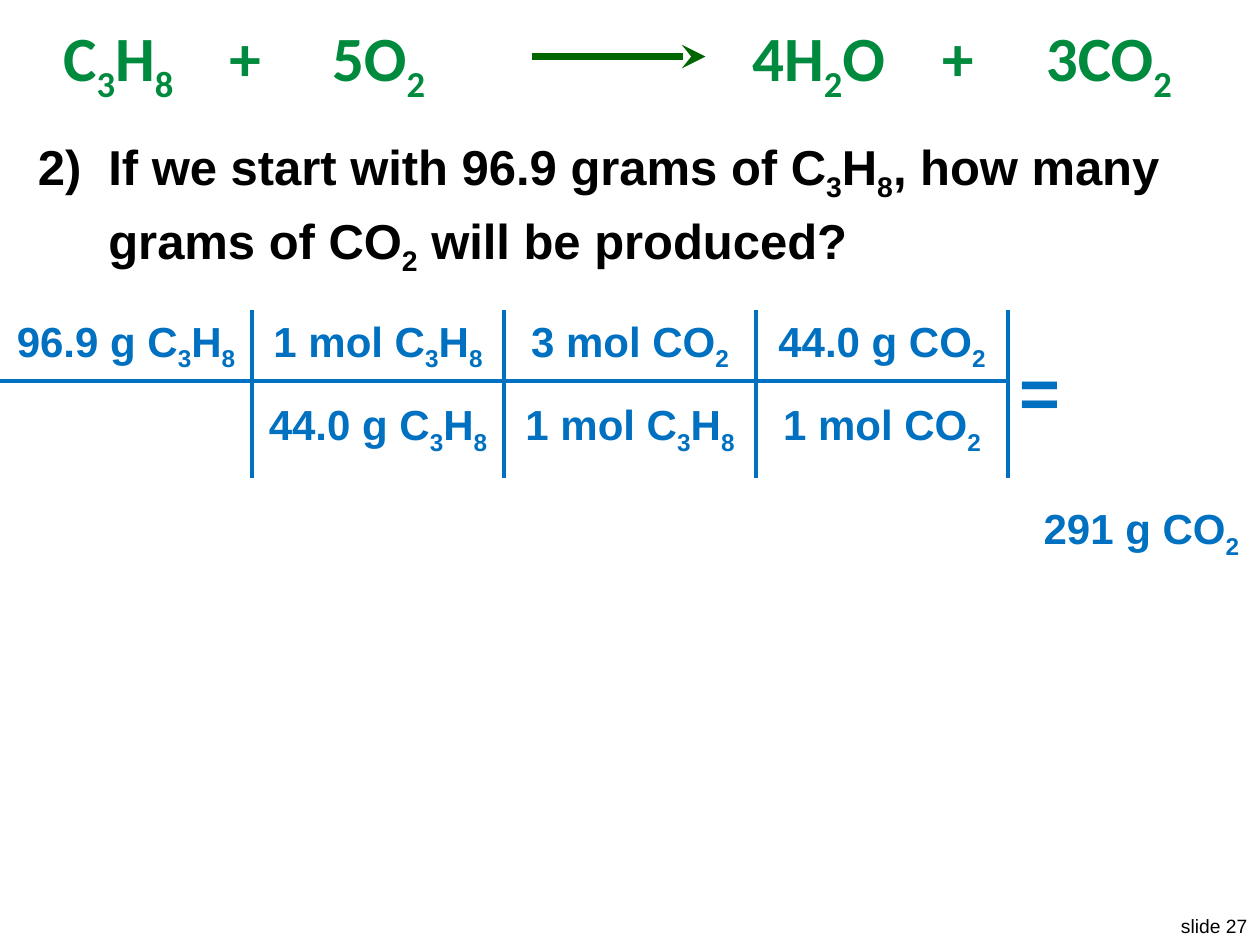
from collections import namedtuple

from lxml import etree
from pptx import Presentation
from pptx.dml.color import RGBColor
from pptx.enum.shapes import MSO_CONNECTOR
from pptx.enum.text import MSO_ANCHOR, MSO_AUTO_SIZE, PP_ALIGN
from pptx.oxml.ns import qn
from pptx.util import Cm, Pt

Box = namedtuple("Box", "left top width height")
GREEN, DARK_GREEN, BLUE, BLACK = "008A3E", "006600", "0070C0", "000000"


def colour(value):
    return RGBColor.from_string(value)


def apply(target, values):
    for name, value in values.items():
        setattr(target, name, value)


def place(box):
    return [Cm(length) for length in box]


def write_formula(paragraph, text, size, ink, font="Arial", bold=True):
    first, *rest = text.split("_")
    pieces = [(first, False)]
    for part in rest:
        pieces += [(part[0], True), (part[1:], False)]
    for piece, lowered in pieces:
        if piece:
            run = paragraph.add_run()
            run.text = piece
            apply(run.font, {"name": font, "size": Pt(size), "bold": bold})
            run.font.color.rgb = colour(ink)
            if lowered:
                run.font._element.set("baseline", "-25000")


def prepare_placeholder(placeholder, box):
    apply(placeholder, dict(zip(Box._fields, place(box))))
    apply(placeholder.text_frame, {
        "word_wrap": True, "vertical_anchor": MSO_ANCHOR.TOP,
        "auto_size": MSO_AUTO_SIZE.NONE})
    paragraph = placeholder.text_frame.paragraphs[0]
    apply(paragraph, {"alignment": PP_ALIGN.LEFT, "space_before": Pt(0)})
    return paragraph


def add_equation(slide, box):
    paragraph = prepare_placeholder(slide.shapes.title, box)
    tabs = etree.SubElement(paragraph._p.get_or_add_pPr(), qn("a:tabLst"))
    for position in (3.35, 5.42, 13.89, 17.72, 19.81):
        etree.SubElement(tabs, qn("a:tab"), pos=str(Cm(position)), algn="l")
    terms = ("C_3H_8", "+", "5O_2", "4H_2O", "+", "3CO_2")
    write_formula(paragraph, "\t".join(terms), 36, GREEN, "Calibri")

    start, level = box.left + 9.7, box.top + 0.89
    arrow = slide.shapes.add_connector(
        MSO_CONNECTOR.STRAIGHT, *place((start, level, start + 3.5, level)))
    arrow.line.color.rgb = colour(DARK_GREEN)
    arrow.line.width = Pt(4.5)
    etree.SubElement(arrow.line._get_or_add_ln(), qn("a:tailEnd"), type="stealth")
    etree.SubElement(arrow._element.spPr, qn("a:effectLst"))


def add_question(slide, box):
    paragraph = prepare_placeholder(slide.placeholders[1], box)
    paragraph.line_spacing = 1.1
    properties = paragraph._p.get_or_add_pPr()
    properties.set("marL", str(Cm(1.42)))
    properties.set("indent", str(Cm(-1.42)))
    etree.SubElement(properties, qn("a:buFont"), typeface="+mj-lt")
    etree.SubElement(properties, qn("a:buAutoNum"), type="arabicParenR", startAt="2")
    write_formula(
        paragraph,
        "If we start with 96.9 grams of C_3H_8, how many grams of CO_2 will be produced?",
        28, BLACK)


def add_plain_table(slide, box, widths, heights):
    table = slide.shapes.add_table(len(heights), len(widths), *place(box)).table
    apply(table, {"first_row": False, "horz_banding": False})
    for column, width in zip(table.columns, widths):
        column.width = Cm(width)
    for row, height in zip(table.rows, heights):
        row.height = Cm(height)
    return table


def format_cell(cell, text, size=24, sides=()):
    apply(cell, {"vertical_anchor": MSO_ANCHOR.MIDDLE,
                 "margin_left": Cm(0.13), "margin_right": Cm(0.13)})
    for side in ("L", "R", "T", "B"):
        if side in sides:
            border = etree.SubElement(
                cell._tc.get_or_add_tcPr(), qn(f"a:ln{side}"), w=str(Pt(3)))
            fill = etree.SubElement(border, qn("a:solidFill"))
            etree.SubElement(fill, qn("a:srgbClr"), val=BLUE)
    cell.fill.background()
    paragraph = cell.text_frame.paragraphs[0]
    paragraph.alignment = PP_ALIGN.CENTER
    write_formula(paragraph, text, size, BLUE)


def add_conversion(slide, box):
    factors = (
        ("96.9 g C_3H_8", "1 mol C_3H_8", "3 mol CO_2", "44.0 g CO_2"),
        ("", "44.0 g C_3H_8", "1 mol C_3H_8", "1 mol CO_2"))
    count = len(factors[0])
    table = add_plain_table(slide, box, [5.08] * count + [1.27], (1.4, 1.96))
    for row, line in enumerate(factors):
        for column, text in enumerate(line):
            sides = "T" if row else "B"
            if column > 0:
                sides += "L"
            if column < count - 1:
                sides += "R"
            format_cell(table.cell(row, column), text, sides=sides)
    equals = table.cell(0, count)
    equals.merge(table.cell(1, count))
    format_cell(equals, "=", size=40)


def add_answer(slide, box):
    table = add_plain_table(slide, box, [box.width], [box.height])
    format_cell(table.cell(0, 0), "291 g CO_2")


def add_slide_number(slide, box):
    frame = slide.shapes.add_textbox(*place(box)).text_frame
    frame.word_wrap = False
    paragraph = frame.paragraphs[0]
    paragraph.alignment = PP_ALIGN.RIGHT
    write_formula(paragraph, "slide 27", 11, BLACK, bold=False)


def main():
    deck = Presentation()
    apply(deck, {"slide_width": Cm(25.4), "slide_height": Cm(19.05)})
    slide = deck.slides.add_slide(deck.slide_layouts[1])
    add_slide_number(slide, Box(23.5, 18.31, 1.9, 0.74))
    add_question(slide, Box(0.51, 2.49, 24.38, 15.37))
    add_equation(slide, Box(1.02, 0.25, 23.39, 1.8))
    add_answer(slide, Box(20.62, 9.73, 4.78, 2.06))
    add_conversion(slide, Box(0, 6.27, 21.59, 3.36))
    deck.save("out.pptx")


if __name__ == "__main__":
    main()
